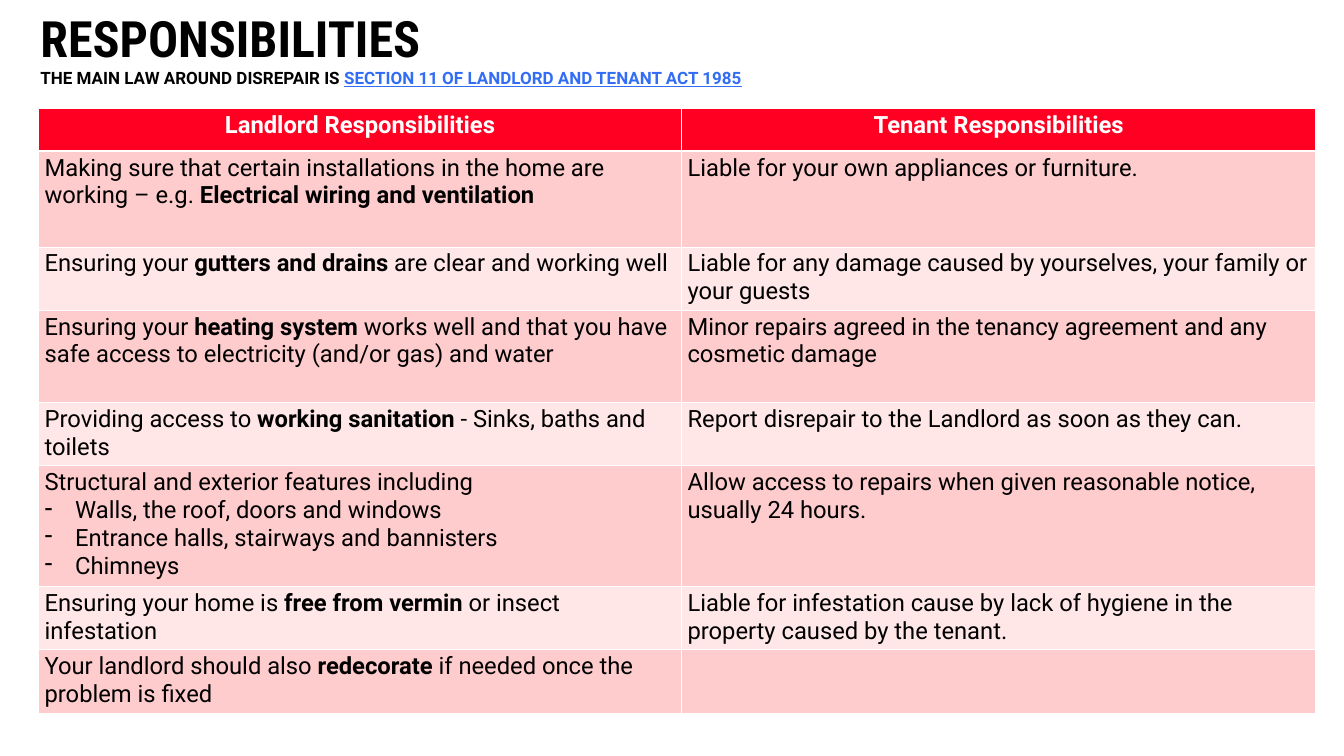
"""Build the slide on landlord and tenant responsibilities for repairs."""

import dataclasses

import lxml.etree
import pptx
import pptx.dml.color
import pptx.enum.text
import pptx.oxml.ns
import pptx.table
import pptx.text.text
import pptx.util

EMU_PER_PX = 9144
RGBColor = pptx.dml.color.RGBColor
BLACK = RGBColor(0x00, 0x00, 0x00)
WHITE = RGBColor(0xFF, 0xFF, 0xFF)
RED = RGBColor(0xFF, 0x00, 0x22)
ROSE = RGBColor(0xFF, 0xCC, 0xCD)
PALE_ROSE = RGBColor(0xFF, 0xE7, 0xE8)
LINK_BLUE = RGBColor(0x33, 0x6D, 0xF5)

COLUMN_WIDTHS = (1052, 1038)
LIST_INDENT = 50
THIN, THICK = 1, 3


@dataclasses.dataclass(frozen=True)
class Duty:
    """One table row; asterisks enclose bold words and "- " opens a list item."""

    height: int
    landlord: str
    tenant: str


HEADER = Duty(70, "*Landlord Responsibilities*", "*Tenant Responsibilities*")
DUTIES = (
    Duty(157, "Making sure that certain installations in the home are working – e.g. "
              "*Electrical wiring and ventilation*",
         "Liable for your own appliances or furniture."),
    Duty(103, "Ensuring your *gutters and drains* are clear and working well",
         "Liable for any damage caused by yourselves, your family or your guests"),
    Duty(151, "Ensuring your *heating system* works well and that you have safe access "
              "to electricity (and/or gas) and water",
         "Minor repairs agreed in the tenancy agreement and any cosmetic damage"),
    Duty(103, "Providing access to *working sanitation* - Sinks, baths and toilets",
         "Report disrepair to the Landlord as soon as they can."),
    Duty(198, "Structural and exterior features including\n"
              "- Walls, the roof, doors and windows\n"
              "- Entrance halls, stairways and bannisters\n"
              "- Chimneys",
         "Allow access to repairs when given reasonable notice, usually 24 hours."),
    Duty(103, "Ensuring your home is *free from vermin* or insect infestation",
         "Liable for infestation cause by lack of hygiene in the property caused by "
         "the tenant."),
    Duty(102, "Your landlord should also *redecorate* if needed once the problem is fixed",
         ""),
)


def px(length: int) -> pptx.util.Emu:
    """Turn px into EMU."""
    return pptx.util.Emu(length * EMU_PER_PX)


def add_span(para: pptx.text.text._Paragraph, text: str, size: int, color: RGBColor,
             bold: bool = True, name: str = "Roboto", underline: bool = False) -> None:
    """Add one formatted run to a paragraph."""
    span = para.add_run()
    span.text = text
    font_format = {"name": name, "size": pptx.util.Pt(size), "bold": bold,
                   "underline": underline}
    for attribute, value in font_format.items():
        setattr(span.font, attribute, value)
    span.font.color.rgb = color


def add_dash(para: pptx.text.text._Paragraph) -> None:
    """Give a paragraph a hanging dash bullet."""
    properties = para._p.get_or_add_pPr()
    properties.set("marL", str(px(LIST_INDENT)))
    properties.set("indent", str(px(-LIST_INDENT)))
    bullet = lxml.etree.SubElement(properties, pptx.oxml.ns.qn("a:buChar"))
    bullet.set("char", "-")


def add_borders(cell: pptx.table._Cell, top: int, bottom: int) -> None:
    """Draw white borders of the given point widths around a cell."""
    properties = cell._tc.get_or_add_tcPr()
    widths = {"a:lnL": THIN, "a:lnR": THIN, "a:lnT": top, "a:lnB": bottom}
    for tag, width in widths.items():
        line = lxml.etree.SubElement(properties, pptx.oxml.ns.qn(tag))
        line.set("w", str(pptx.util.Pt(width)))
        fill = lxml.etree.SubElement(line, pptx.oxml.ns.qn("a:solidFill"))
        color = lxml.etree.SubElement(fill, pptx.oxml.ns.qn("a:srgbClr"))
        color.set("val", str(WHITE))


def fill_cell(cell: pptx.table._Cell, text: str, row: int) -> None:
    """Write and colour one cell of the given row."""
    is_header = row == 0
    add_borders(cell, THICK if row == 1 else THIN, THICK if is_header else THIN)
    cell.fill.solid()
    cell.fill.fore_color.rgb = RED if is_header else ROSE if row % 2 else PALE_ROSE
    frame = cell.text_frame
    for index, line in enumerate(text.splitlines()):
        para = frame.add_paragraph() if index else frame.paragraphs[0]
        if is_header:
            para.alignment = pptx.enum.text.PP_ALIGN.CENTER
        if line.startswith("- "):
            add_dash(para)
        for part, words in enumerate(line.removeprefix("- ").split("*")):
            if words:
                add_span(para, words, 28, WHITE if is_header else BLACK, part % 2 == 1)


def add_title(page: pptx.slide.Slide) -> None:
    """Add the title and the line naming the law."""
    box = page.shapes.add_textbox(px(66), px(12), px(1251), px(166))
    frame_format = {"word_wrap": True, "margin_left": 0, "margin_top": 0,
                    "margin_right": 0, "margin_bottom": 0}
    for attribute, value in frame_format.items():
        setattr(box.text_frame, attribute, value)
    add_span(box.text_frame.paragraphs[0], "RESPONSIBILITIES", 59, BLACK,
             name="Roboto Condensed")
    para = box.text_frame.add_paragraph()
    add_span(para, "THE MAIN LAW AROUND DISREPAIR IS ", 20, BLACK)
    add_span(para, "SECTION 11 OF LANDLORD AND TENANT ACT 1985", 20, LINK_BLUE,
             underline=True)


def add_duties(page: pptx.slide.Slide) -> None:
    """Add the table of landlord and tenant duties."""
    duties = (HEADER, *DUTIES)
    height = sum(duty.height for duty in duties)
    table = page.shapes.add_table(len(duties), len(COLUMN_WIDTHS), px(63), px(177),
                                  px(sum(COLUMN_WIDTHS)), px(height)).table
    for column, width in zip(table.columns, COLUMN_WIDTHS):
        column.width = px(width)
    for row, duty in enumerate(duties):
        table.rows[row].height = px(duty.height)
        for column, text in enumerate((duty.landlord, duty.tenant)):
            fill_cell(table.cell(row, column), text, row)


def main() -> None:
    """Build and save the deck."""
    deck = pptx.Presentation()
    deck.slide_width, deck.slide_height = px(2199), px(1237)
    page = deck.slides.add_slide(deck.slide_layouts[6])
    add_title(page)
    add_duties(page)
    deck.save("out.pptx")


if __name__ == "__main__":
    main()
